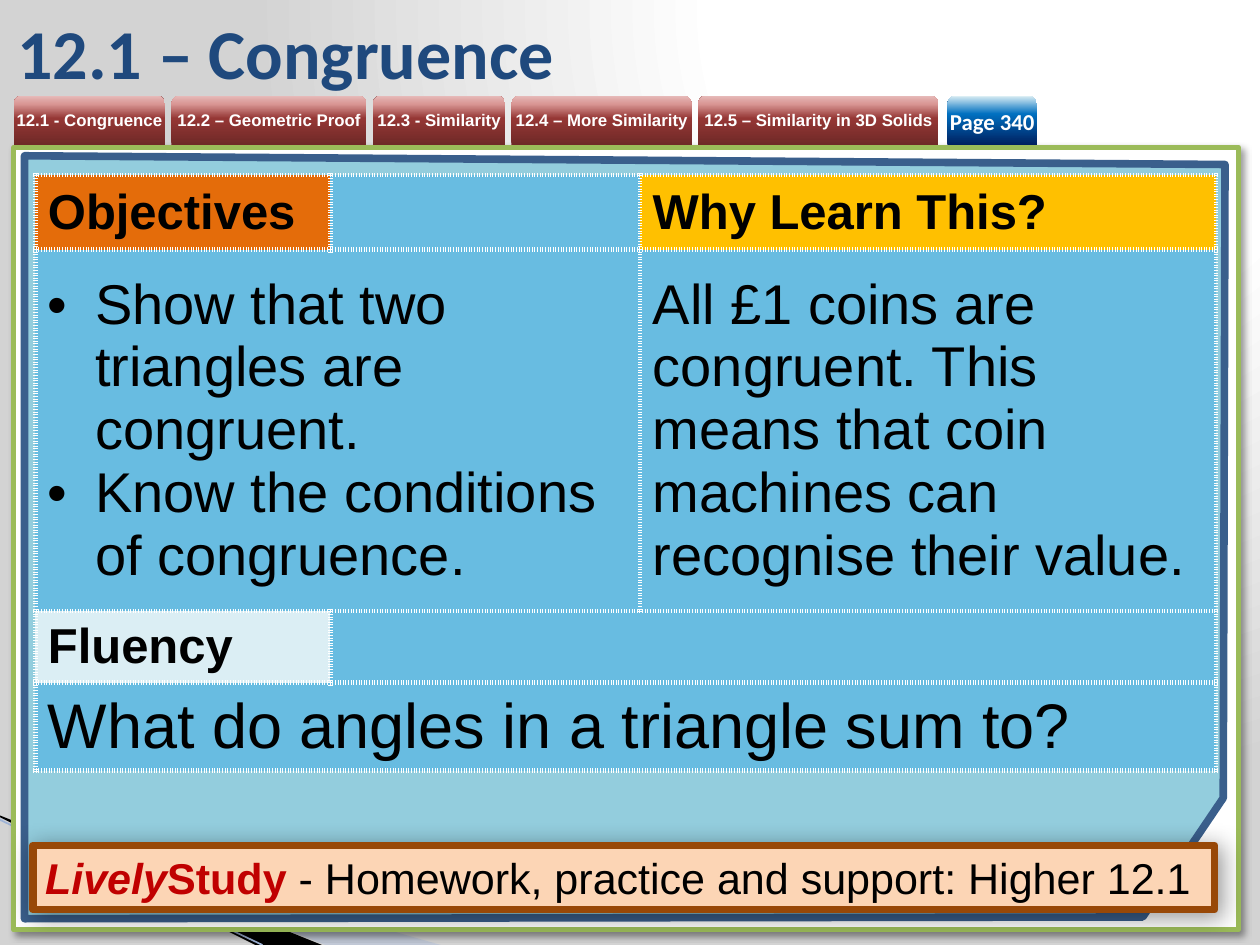
from lxml import etree
from pptx import Presentation
from pptx.dml.color import RGBColor
from pptx.enum.shapes import MSO_CONNECTOR, MSO_SHAPE
from pptx.enum.text import MSO_ANCHOR, PP_ALIGN
from pptx.oxml import parse_xml
from pptx.oxml.ns import qn
from pptx.util import Pt

COLOURS = {
    "white": "FFFFFF", "black": "000000", "grey": "D3D3D3",
    "pale_blue": "A7B9DB", "line_blue": "9EB3D6", "green": "9BBB59",
    "panel": "93CDDD", "panel_edge": "3A5F8C", "title": "1F497D",
    "cell": "68BCE1", "orange": "E46C0A", "gold": "FFC000", "ice": "DBEEF4",
    "peach": "FCD5B5", "brown": "984807", "red": "C00000",
}
RED_STOPS = [(0, "6F2927"), (54, "953735"), (83, "D99694"), (100, "E6B9B8")]
BLUE_STOPS = [(0, "002060"), (63, "0070C0"), (100, "DBEEF4")]
UPWARD = '<a:lin ang="16200000" scaled="0"/>'
CORNER = '<a:path path="circle"><a:fillToRect l="65000" t="0" r="0" b="98000"/></a:path>'
NAMESPACE = 'xmlns:a="http://schemas.openxmlformats.org/drawingml/2006/main"'


def set_gradient(fill, parent, stops, direction):
    fill.gradient()
    stop_xml = "".join(
        f'<a:gs pos="{position * 1000}"><a:srgbClr val="{colour}"/></a:gs>'
        for position, colour in stops)
    old = next(parent.iter(qn("a:gradFill")))
    old.getparent().replace(old, parse_xml(
        f'<a:gradFill {NAMESPACE} rotWithShape="1"><a:gsLst>{stop_xml}</a:gsLst>'
        f'{direction}</a:gradFill>'))


def add_run(paragraph, text, size, colour, font="Arial", bold=False, italic=False):
    run = paragraph.add_run()
    run.text = text
    run.font.size = Pt(size)
    run.font.name = font
    run.font.bold = bold
    run.font.italic = italic
    run.font.color.rgb = RGBColor.from_string(COLOURS[colour])


presentation = Presentation()
presentation.slide_width, presentation.slide_height = Pt(720), Pt(540)
slide = presentation.slides.add_slide(presentation.slide_layouts[6])
shapes = slide.shapes
set_gradient(slide.background.fill, slide.background._cSld,
             [(0, COLOURS["white"]), (40, COLOURS["white"]), (100, COLOURS["grey"])], CORNER)

# Corner bands, framed page and cut-corner panel
bands = [
    ([(0, 467.5), (251.5, 540), (186.5, 540), (0, 467)], "pale_blue", None),
    ([(0, 466.5), (184.5, 539.5), (145.5, 540), (0.5, 467)], "black", None),
]
panel = ([(14.4, 89.3), (699.8, 93.6), (699, 455.8), (653, 523.5), (14.4, 525)],
         "panel", "panel_edge")
for points, fill, edge in bands + [panel]:
    if edge:
        connector = shapes.add_connector(
            MSO_CONNECTOR.STRAIGHT, Pt(0), Pt(468.5), Pt(150), Pt(540))
        connector.line.color.rgb = RGBColor.from_string(COLOURS["line_blue"])
        connector.line.width = Pt(0.95)
        etree.SubElement(connector._element.spPr, qn("a:effectLst"))
        page = shapes.add_shape(MSO_SHAPE.RECTANGLE, Pt(7.9), Pt(84.2), Pt(699.8), Pt(447.1))
        page.fill.solid()
        page.fill.fore_color.rgb = RGBColor.from_string(COLOURS["white"])
        page.line.color.rgb = RGBColor.from_string(COLOURS["green"])
        page.line.width = Pt(3)
    builder = shapes.build_freeform(*points[0], scale=Pt(1))
    builder.add_line_segments(points[1:], close=True)
    shape = builder.convert_to_shape()
    shape.shadow.inherit = False
    shape.fill.solid()
    shape.fill.fore_color.rgb = RGBColor.from_string(COLOURS[fill])
    if edge:
        shape.line.color.rgb = RGBColor.from_string(COLOURS[edge])
        shape.line.width = Pt(4.33)
    else:
        shape.line.fill.background()
    if fill == "pale_blue":
        colour = next(shape._element.spPr.iter(qn("a:srgbClr")))
        etree.SubElement(colour, qn("a:alpha"), val="40000")

# Section tabs and page tab: text, width, gap after, size, font, stops
tabs = [
    ("12.1 - Congruence", 86.4, 3.6, 9.6, "Arial", RED_STOPS),
    ("12.2 – Geometric Proof", 111.6, 3.6, 9.6, "Arial", RED_STOPS),
    ("12.3 - Similarity", 75.6, 3.6, 9.6, "Arial", RED_STOPS),
    ("12.4 – More Similarity", 103, 3.6, 9.6, "Arial", RED_STOPS),
    ("12.5 – Similarity in 3D Solids", 137.5, 5, 9.6, "Arial", RED_STOPS),
    ("Page 340", 51.1, 0, 13, "Calibri", BLUE_STOPS),
]
left = 7.9
for text, width, gap, size, font, stops in tabs:
    tab = shapes.add_shape(MSO_SHAPE.ROUND_2_SAME_RECTANGLE,
                           Pt(left), Pt(54.7), Pt(width), Pt(28.1))
    tab.shadow.inherit = False
    tab.line.fill.background()
    set_gradient(tab.fill, tab._element.spPr, stops, UPWARD)
    frame = tab.text_frame
    frame.margin_left = frame.margin_right = frame.margin_top = frame.margin_bottom = 0
    frame.vertical_anchor = MSO_ANCHOR.MIDDLE
    frame.word_wrap = False
    paragraph = frame.paragraphs[0]
    paragraph.alignment = PP_ALIGN.CENTER
    if font == "Arial":
        paragraph.line_spacing = Pt(10)
    add_run(paragraph, text, size, "white", font, bold=True)
    left += width + gap

# Title
title = shapes.add_textbox(Pt(2.9), Pt(3.6), Pt(595.4), Pt(51.1))
title.text_frame.word_wrap = True
title.text_frame.vertical_anchor = MSO_ANCHOR.MIDDLE
add_run(title.text_frame.paragraphs[0], "12.1 – Congruence", 40, "title", "Calibri", bold=True)

# Lesson table
table_frame = shapes.add_table(4, 3, Pt(20.2), Pt(100.1), Pt(674.6), Pt(329.8))
table = table_frame.table
for column, width in zip(table.columns, (168.5, 177.1, 329)):
    column.width = Pt(width)
for row, height in zip(table.rows, (42.5, 206.6, 38.5, 47.4)):
    row.height = Pt(height)
table.cell(1, 0).merge(table.cell(1, 1))
table.cell(2, 1).merge(table.cell(2, 2))
table.cell(3, 0).merge(table.cell(3, 2))

# (row, column): paragraphs, size, bold, fill
contents = {
    (0, 0): (["Objectives"], 28, True, "orange"),
    (0, 2): (["Why Learn This?"], 28, True, "gold"),
    (1, 0): (["Show that two triangles are congruent.",
              "Know the conditions of congruence."], 32, False, "cell"),
    (1, 2): (["All £1 coins are congruent. This means that coin machines can "
              "recognise their value."], 32, False, "cell"),
    (2, 0): (["Fluency"], 28, True, "ice"),
    (3, 0): (["What do angles in a triangle sum to?"], 36, False, "cell"),
}
for row in range(4):
    for column in range(3):
        cell = table.cell(row, column)
        texts, size, bold, fill = contents.get((row, column), ([], 18, False, "cell"))
        cell.vertical_anchor = MSO_ANCHOR.MIDDLE
        for index, text in enumerate(texts):
            frame = cell.text_frame
            paragraph = frame.add_paragraph() if index else frame.paragraphs[0]
            if len(texts) > 1:
                properties = paragraph._p.get_or_add_pPr()
                properties.set("marL", str(Pt(27)))
                properties.set("indent", str(-Pt(27)))
                etree.SubElement(properties, qn("a:buFont"), typeface="Arial")
                etree.SubElement(properties, qn("a:buChar"), char="•")
            add_run(paragraph, text, size, "black", bold=bold)
        cell_properties = cell._tc.get_or_add_tcPr()
        for side in ("lnL", "lnR", "lnT", "lnB"):
            cell_properties.append(parse_xml(
                f'<a:{side} {NAMESPACE} w="{Pt(3)}"><a:solidFill><a:srgbClr '
                f'val="{COLOURS["white"]}"/></a:solidFill><a:prstDash val="sysDot"/></a:{side}>'))
        cell.fill.solid()
        cell.fill.fore_color.rgb = RGBColor.from_string(COLOURS[fill])

# Homework banner
banner = shapes.add_shape(MSO_SHAPE.RECTANGLE, Pt(18.7), Pt(483.1), Pt(675.4), Pt(36.7))
banner.fill.solid()
banner.fill.fore_color.rgb = RGBColor.from_string(COLOURS["peach"])
banner.line.color.rgb = RGBColor.from_string(COLOURS["brown"])
banner.line.width = Pt(4.33)
banner.text_frame.word_wrap = True
banner.text_frame.vertical_anchor = MSO_ANCHOR.MIDDLE
paragraph = banner.text_frame.paragraphs[0]
paragraph.alignment = PP_ALIGN.LEFT
add_run(paragraph, "Lively", 24.6, "red", bold=True, italic=True)
add_run(paragraph, "Study ", 24.6, "red", bold=True)
add_run(paragraph, "- Homework, practice and support: Higher 12.1", 24.6, "black")

# Drop shadows
for shape, blur in ((page, 4), (banner, 13)):
    shape.shadow.inherit = False
    shape._element.spPr.find(qn("a:effectLst")).append(parse_xml(
        f'<a:outerShdw {NAMESPACE} blurRad="{Pt(blur)}" dist="{Pt(3)}" dir="2700000" '
        f'algn="tl" rotWithShape="0"><a:srgbClr val="{COLOURS["black"]}">'
        '<a:alpha val="40000"/></a:srgbClr></a:outerShdw>'))

presentation.save("out.pptx")
